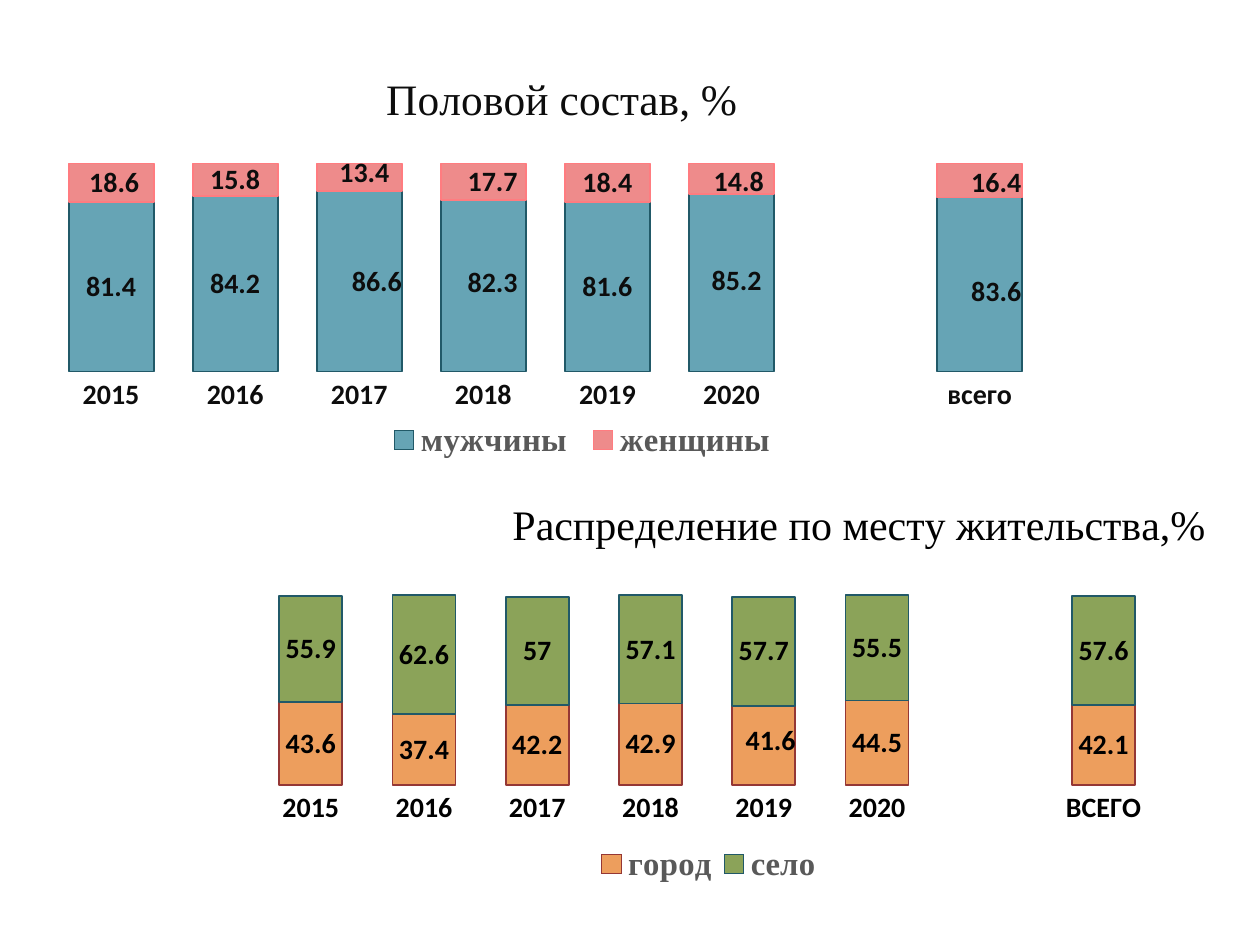
from dataclasses import dataclass

from lxml import etree
from pptx import Presentation
from pptx.chart.data import CategoryChartData
from pptx.dml.color import RGBColor
from pptx.enum.chart import XL_CHART_TYPE, XL_LEGEND_POSITION, XL_TICK_MARK
from pptx.oxml.ns import qn
from pptx.util import Inches, Pt

STACKED = XL_CHART_TYPE.COLUMN_STACKED
LEGEND_BOTTOM = XL_LEGEND_POSITION.BOTTOM
NO_TICKS = XL_TICK_MARK.NONE


@dataclass(frozen=True)
class Theme:
    body: str = "Calibri"
    heading: str = "Times New Roman"
    near_black: str = "0D0D0D"
    black: str = "000000"
    legend_grey: str = "595959"
    teal: str = "31859C"
    dark_teal: str = "215968"
    rose: str = "EA6C6C"
    pink: str = "FF7C80"
    orange: str = "E46C0A"
    brown: str = "953735"
    green: str = "77933C"
    large_title_size: float = 18.6
    title_size: int = 18
    legend_size: int = 14
    label_size: int = 12
    base_size: int = 10


THEME = Theme()


def style_font(font, name, size, color, bold):
    font.name = name
    font.size = Pt(size)
    font.bold = bold
    font.color.rgb = RGBColor.from_string(color)


def set_layout(element, index, **settings):
    """Place a chart part by fractions of the chart area."""
    for old in element.findall(qn("c:layout")):
        element.remove(old)
    layout = etree.Element(qn("c:layout"))
    manual = etree.SubElement(layout, qn("c:manualLayout"))
    for tag, value in settings.items():
        etree.SubElement(manual, qn(f"c:{tag}")).set("val", str(value))
    element.insert(index, layout)


YEARS = ["2015", "2016", "2017", "2018", "2019", "2020", ""]

# Series: name, values, fill, opacity in %, outline, label shifts by point
CHARTS = [
    {
        "title": "Половой состав, %", "total": "всего",
        "at": (0.15, 0.37, 6.2, 2.52), "ink": THEME.near_black, "gap": 46,
        "title_at": (0.339, 0.004), "title_size": THEME.large_title_size,
        "plot": (0.023, 0.141, 0.953, 0.59), "legend": (0.34, 0.838, 0.39, 0.11),
        "series": [
            ("мужчины", [81.4, 84.2, 86.6, 82.3, 81.6, 85.2, None, 83.6],
             THEME.teal, 74, THEME.dark_teal,
             {2: (0.017, 0), 3: (0.009, -0.007), 5: (0.005, -0.005), 7: (0.016, 0.018)}),
            ("женщины", [18.6, 15.8, 13.4, 17.7, 18.4, 14.8, None, 16.4],
             THEME.rose, 79, THEME.pink,
             {0: (0.003, 0), 2: (0.005, -0.01), 3: (0.009, 0),
              5: (0.007, 0.007), 7: (0.016, 0.007)}),
        ],
    },
    {
        "title": "Распределение по месту жительства,%", "total": "ВСЕГО",
        "at": (1.39, 2.81, 5.85, 2.52), "ink": THEME.black, "gap": 80,
        "title_at": (0.276, 0.044), "title_size": THEME.title_size,
        "plot": (0.021, 0.202, 0.922, 0.537), "legend": (0.362, 0.902, 0.243, 0.11),
        "series": [
            ("город", [43.6, 37.4, 42.2, 42.9, 41.6, 44.5, None, 42.1],
             THEME.orange, 66, THEME.brown, {4: (0.007, -0.01)}),
            ("село", [55.9, 62.6, 57, 57.1, 57.7, 55.5, None, 57.6],
             THEME.green, 85, THEME.dark_teal, {}),
        ],
    },
]

# Slide in 4:3 format
prs = Presentation()
prs.slide_width = Inches(7.5)
prs.slide_height = Inches(7.5 * 3 / 4)
slide = prs.slides.add_slide(prs.slide_layouts[6])

for info in CHARTS:
    ink = info["ink"]
    shares = CategoryChartData()
    shares.categories = YEARS + [info["total"]]
    for name, values, *_ in info["series"]:
        shares.add_series(name, values)
    place = [Inches(length) for length in info["at"]]
    chart = slide.shapes.add_chart(STACKED, *place, shares).chart
    style_font(chart.font, THEME.body, THEME.base_size, THEME.black, False)

    # Title
    chart.has_title = True
    heading = chart.chart_title.text_frame.paragraphs[0].add_run()
    heading.text = info["title"]
    style_font(heading.font, THEME.heading, info["title_size"], ink, False)
    x, y = info["title_at"]
    set_layout(chart.chart_title._element, 1, xMode="edge", yMode="edge", x=x, y=y)

    # Plot area and axes
    x, y, w, h = info["plot"]
    set_layout(chart._chartSpace.chart.plotArea, 0, layoutTarget="inner",
               xMode="edge", yMode="edge", x=x, y=y, w=w, h=h)
    years_axis, share_axis = chart.category_axis, chart.value_axis
    years_axis.major_tick_mark = years_axis.minor_tick_mark = NO_TICKS
    years_axis.format.line.fill.background()
    style_font(years_axis.tick_labels.font, THEME.body, THEME.label_size, ink, True)
    share_axis.minimum_scale, share_axis.maximum_scale = 0, 120
    share_axis.has_major_gridlines = False
    share_axis.visible = False

    # Legend
    chart.has_legend = True
    chart.legend.position = LEGEND_BOTTOM
    chart.legend.include_in_layout = False
    style_font(chart.legend.font, THEME.heading, THEME.legend_size,
               THEME.legend_grey, True)
    x, y, w, h = info["legend"]
    set_layout(chart.legend._element, 1, xMode="edge", yMode="edge", x=x, y=y, w=w, h=h)

    # Columns and their labels
    columns = chart.plots[0]
    columns.gap_width, columns.overlap = info["gap"], 100
    for series, (_, _, fill, opacity, outline, shifts) in zip(columns.series, info["series"]):
        series.format.fill.solid()
        series.format.fill.fore_color.rgb = RGBColor.from_string(fill)
        tint = series._element.find(".//" + qn("a:srgbClr"))
        etree.SubElement(tint, qn("a:alpha")).set("val", str(opacity * 1000))
        series.format.line.color.rgb = RGBColor.from_string(outline)
        series.format.line.width = Pt(0.75)
        series.data_labels.show_value = True
        style_font(series.data_labels.font, THEME.body, THEME.label_size, ink, True)
        for point, (dx, dy) in shifts.items():
            label = series.points[point].data_label
            style_font(label.font, THEME.body, THEME.label_size, ink, True)
            set_layout(label._dLbl, 1, x=dx, y=dy)

prs.save("out.pptx")
